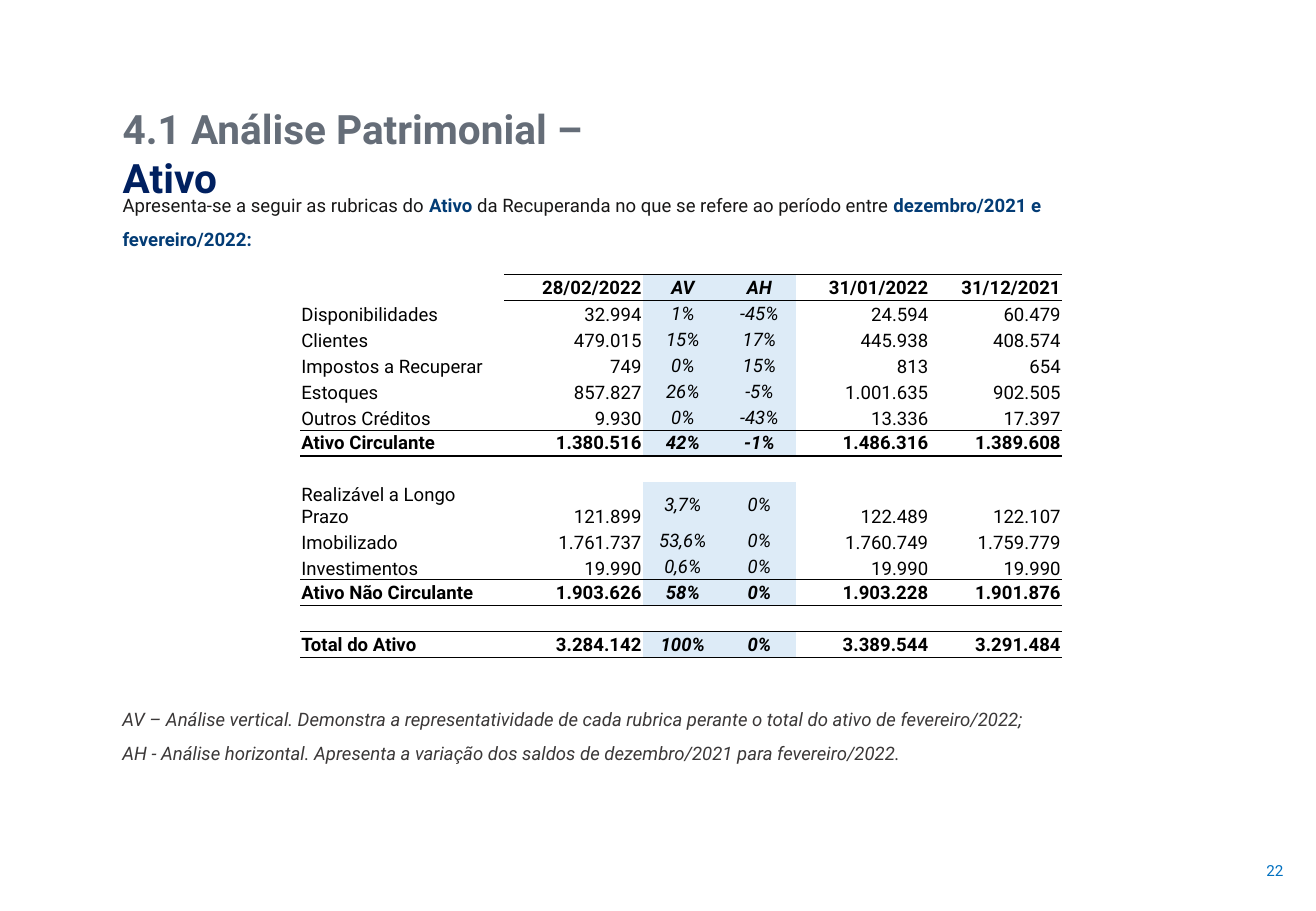
from pptx import Presentation
from pptx.dml.color import RGBColor
from pptx.enum.text import MSO_ANCHOR, MSO_AUTO_SIZE, PP_ALIGN
from pptx.oxml import parse_xml
from pptx.oxml.ns import nsdecls, qn
from pptx.util import Inches, Pt

LEFT, CENTER, RIGHT, JUSTIFY = PP_ALIGN.LEFT, PP_ALIGN.CENTER, PP_ALIGN.RIGHT, PP_ALIGN.JUSTIFY
TOP, MIDDLE, BOTTOM = MSO_ANCHOR.TOP, MSO_ANCHOR.MIDDLE, MSO_ANCHOR.BOTTOM
NO_AUTOFIT = MSO_AUTO_SIZE.NONE

FONT = "Roboto"
GRAY, NAVY, BLUE, INK = "656D78", "002060", "033C75", "181717"
NOTE_GRAY, PAGE_BLUE, BLACK, BAND = "3B3838", "0070C0", "000000", "DDEBF7"
PLAIN_TABLE_STYLE = "{2D5ABB26-0587-4C30-8999-92F81FD0307C}"

COLUMN_WIDTHS = [1.68, 1.14, 0.66, 0.6, 1.1, 1.09]
PERCENT_COLUMNS = (2, 3)
TOTAL_LABELS = ("Ativo Circulante", "Ativo Não Circulante", "Total do Ativo")
BALANCE = [
    ["", "28/02/2022", "AV", "AH", "31/01/2022", "31/12/2021"],
    ["Disponibilidades", "32.994", "1%", "-45%", "24.594", "60.479"],
    ["Clientes", "479.015", "15%", "17%", "445.938", "408.574"],
    ["Impostos a Recuperar", "749", "0%", "15%", "813", "654"],
    ["Estoques", "857.827", "26%", "-5%", "1.001.635", "902.505"],
    ["Outros Créditos", "9.930", "0%", "-43%", "13.336", "17.397"],
    ["Ativo Circulante", "1.380.516", "42%", "-1%", "1.486.316", "1.389.608"],
    [""] * 6,
    ["Realizável a Longo Prazo", "121.899", "3,7%", "0%", "122.489", "122.107"],
    ["Imobilizado", "1.761.737", "53,6%", "0%", "1.760.749", "1.759.779"],
    ["Investimentos", "19.990", "0,6%", "0%", "19.990", "19.990"],
    ["Ativo Não Circulante", "1.903.626", "58%", "0%", "1.903.228", "1.901.876"],
    [""] * 6,
    ["Total do Ativo", "3.284.142", "100%", "0%", "3.389.544", "3.291.484"],
]


def color(value):
    return RGBColor.from_string(value)


def style_font(font, size, fill, bold=False, italic=False):
    font.name, font.size = FONT, Pt(size)
    font.bold, font.italic = bold, italic
    font.color.rgb = color(fill)


def add_colored_runs(paragraph, parts):
    for text, fill, bold in parts:
        run = paragraph.add_run()
        run.text = text
        run.font.bold = bold
        run.font.color.rgb = color(fill)


def add_text_frame(slide, left, top, width, height, anchor=TOP):
    box = slide.shapes.add_textbox(Inches(left), Inches(top), Inches(width), Inches(height))
    frame = box.text_frame
    frame.word_wrap = True
    frame.vertical_anchor = anchor
    return frame


def place_title(slide, left, top, width, height):
    title = slide.shapes.title
    title.left, title.top = Inches(left), Inches(top)
    title.width, title.height = Inches(width), Inches(height)
    frame = title.text_frame
    frame.word_wrap = True
    frame.auto_size = NO_AUTOFIT
    frame.vertical_anchor = TOP
    heading = frame.paragraphs[0]
    heading.alignment = LEFT
    style_font(heading.font, 24, GRAY, bold=True)
    add_colored_runs(heading, [("4.1 Análise Patrimonial – ", GRAY, True), ("Ativo", NAVY, True)])


def add_intro(slide, left, top, width, height):
    intro = add_text_frame(slide, left, top, width, height).paragraphs[0]
    intro.line_spacing = 1.5
    style_font(intro.font, 11, INK)
    add_colored_runs(intro, [
        ("Apresenta-se a seguir as rubricas do ", INK, False),
        ("Ativo", BLUE, True),
        (" da Recuperanda no que se refere ao período entre ", INK, False),
        ("dezembro/2021 e fevereiro/2022:", BLUE, True),
    ])


def add_rule(cell, side, width):
    cell._tc.get_or_add_tcPr().append(parse_xml(
        f'<a:{side} {nsdecls("a")} w="{Pt(width)}"><a:solidFill>'
        f'<a:srgbClr val="{BLACK}"/></a:solidFill></a:{side}>'))


def fill_cell(cell, text, column, is_header, is_total):
    strong = is_header or is_total
    is_percent = column in PERCENT_COLUMNS
    cell.margin_left = cell.margin_right = cell.margin_top = Inches(0.01)
    cell.margin_bottom = 0
    cell.vertical_anchor = MIDDLE if strong or is_percent else BOTTOM
    # Rules above and below the header and each total
    if is_total or (is_header and text):
        add_rule(cell, "lnT", 0.5)
        add_rule(cell, "lnB", 1)
    if is_percent and text:
        cell.fill.solid()
        cell.fill.fore_color.rgb = color(BAND)
    else:
        cell.fill.background()
    entry = cell.text_frame.paragraphs[0]
    entry.text = text
    entry.alignment = LEFT if column == 0 else CENTER if is_percent else RIGHT
    style_font(entry.font, 11, BLACK, bold=strong, italic=is_percent)


def add_balance_table(slide, left, top, width, height):
    table = slide.shapes.add_table(len(BALANCE), len(COLUMN_WIDTHS), Inches(left), Inches(top),
                                   Inches(width), Inches(height)).table
    table.first_row = table.horz_banding = False
    table._tbl.tblPr.find(qn("a:tableStyleId")).text = PLAIN_TABLE_STYLE
    for column, column_width in zip(table.columns, COLUMN_WIDTHS):
        column.width = Inches(column_width)
    for row, values in enumerate(BALANCE):
        for column, text in enumerate(values):
            fill_cell(table.cell(row, column), text, column, row == 0, values[0] in TOTAL_LABELS)


def add_notes_on_columns(slide, left, top, width, height):
    frame = add_text_frame(slide, left, top, width, height)
    frame.text = (
        "AV – Análise vertical. Demonstra a representatividade de cada rubrica "
        "perante o total do ativo de fevereiro/2022;\n"
        "AH - Análise horizontal. Apresenta a variação dos saldos de dezembro/2021 "
        "para fevereiro/2022.")
    for note in frame.paragraphs:
        note.alignment = JUSTIFY
        note.line_spacing = 1.5
        style_font(note.font, 11, NOTE_GRAY, italic=True)


def add_page_number(slide, left, top, width, height):
    number = add_text_frame(slide, left, top, width, height, MIDDLE).paragraphs[0]
    number.text = "22"
    number.alignment = RIGHT
    style_font(number.font, 9, PAGE_BLUE)


def main():
    deck = Presentation()
    deck.slide_width, deck.slide_height = Inches(10.83), Inches(7.5)
    slide = deck.slides.add_slide(deck.slide_layouts.get_by_name("Title Only"))
    place_title(slide, 0.91, 0.81, 4.71, 0.5)
    add_intro(slide, 0.91, 1.46, 8.61, 0.35)
    add_balance_table(slide, 2.47, 2.26, 6.27, 2.99)
    add_notes_on_columns(slide, 0.91, 5.69, 8.7, 0.63)
    add_page_number(slide, 9.87, 6.92, 0.79, 0.5)
    deck.save("out.pptx")


if __name__ == "__main__":
    main()
